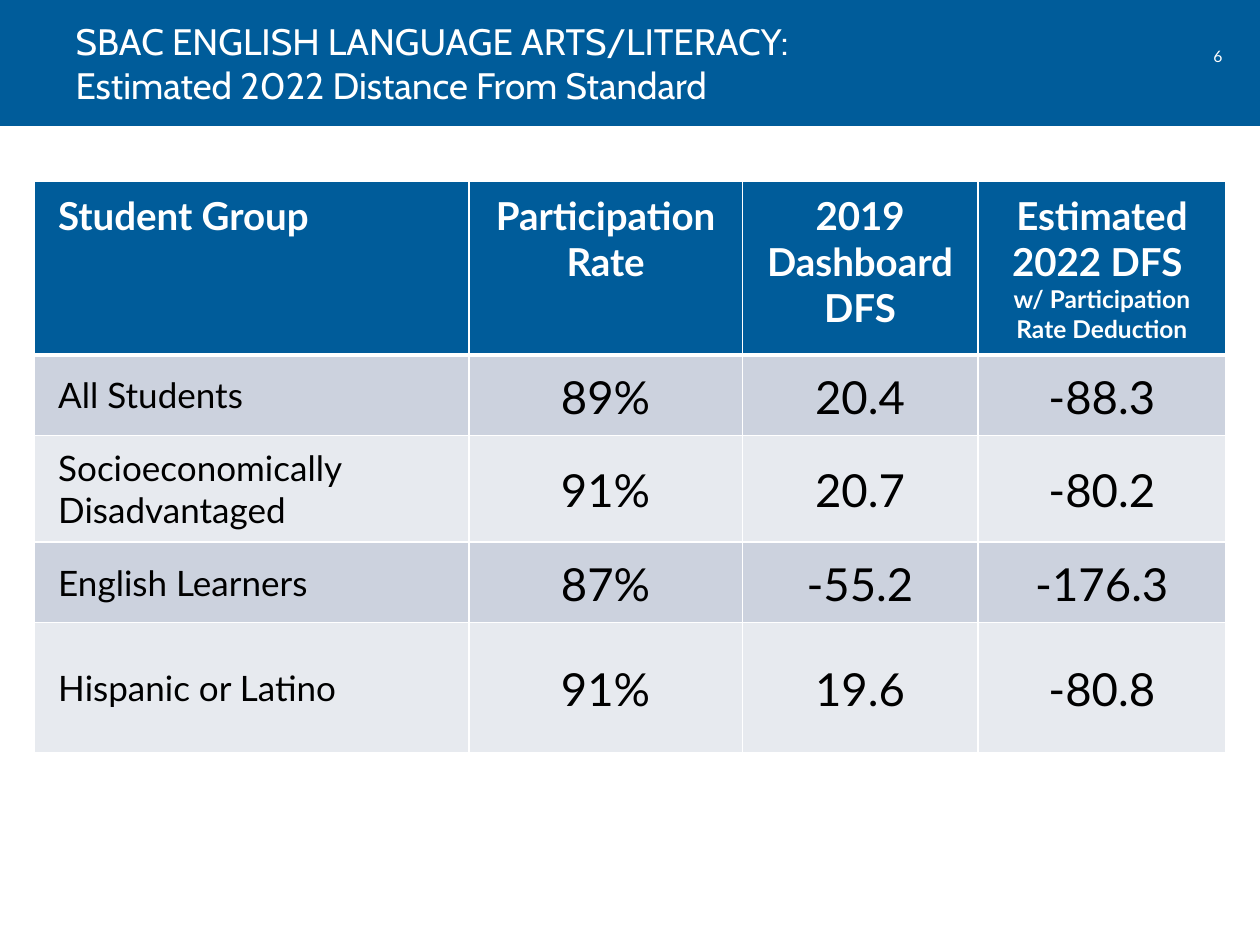
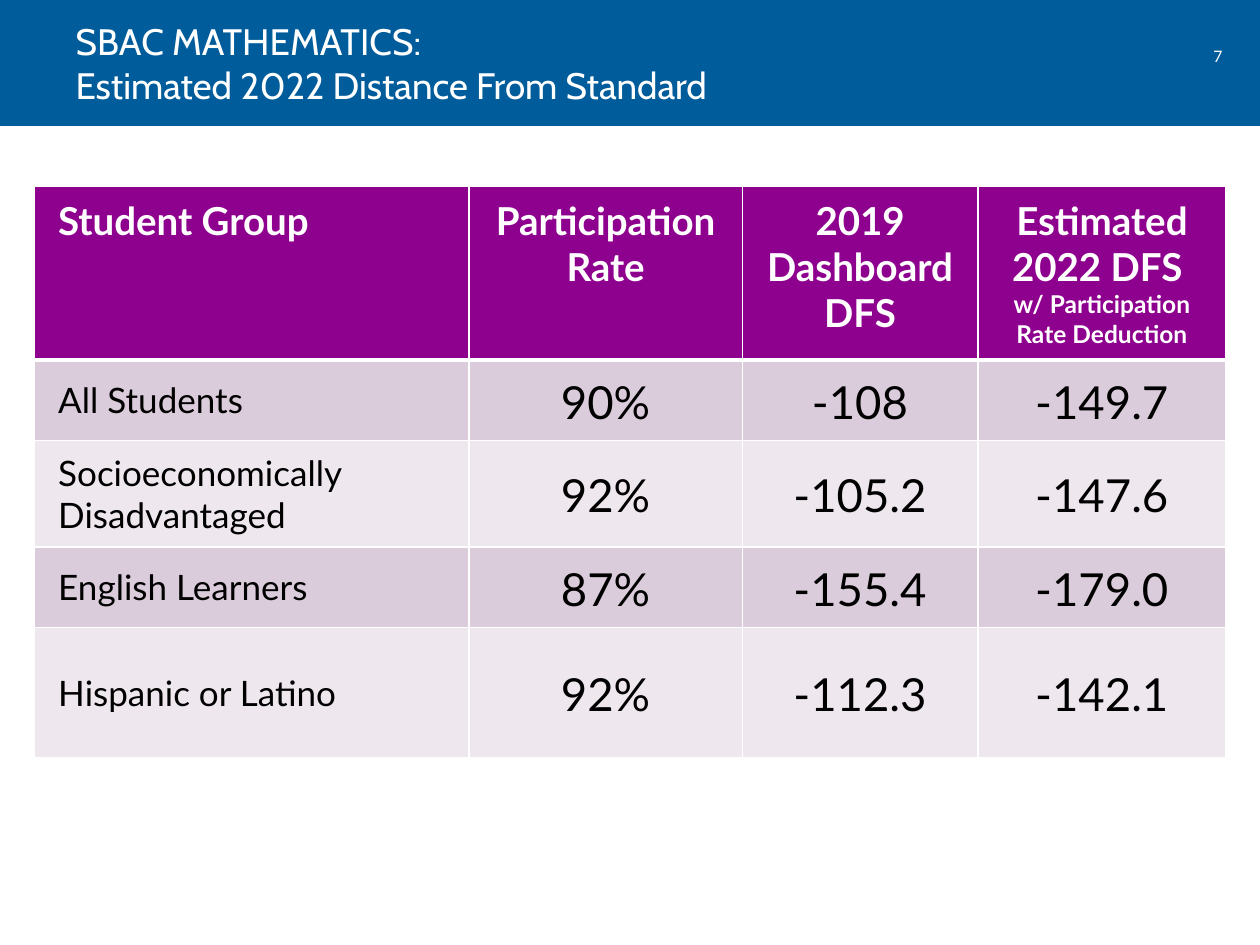
from dataclasses import dataclass

from lxml import etree
from pptx import Presentation
from pptx.dml.color import RGBColor
from pptx.enum import shapes, text
from pptx.oxml import ns
from pptx.util import Pt

WHITE = RGBColor(0xFF, 0xFF, 0xFF)
BLACK = RGBColor(0x00, 0x00, 0x00)
BLUE = RGBColor(0x00, 0x5C, 0x9A)
BLUE_DARK_BAND = RGBColor(0xCC, 0xD2, 0xDE)
BLUE_LIGHT_BAND = RGBColor(0xE7, 0xEA, 0xEF)
PURPLE = RGBColor(0x8E, 0x00, 0x8E)
PURPLE_DARK_BAND = RGBColor(0xDB, 0xCC, 0xDB)
PURPLE_LIGHT_BAND = RGBColor(0xEE, 0xE7, 0xEE)

TITLE_FONT = "Cabin"
BODY_FONT = "Lato"
SLIDE_W, SLIDE_H, BAND_H = 720, 540, 72
TABLE_LEFT, TABLE_H = 19.6, 328
COL_WIDTHS = (248.4, 156.2, 134.6, 141.8)
ROW_HEIGHTS = (60.5, 46, 46, 46, 74.5)
WIDE_INSETS = (13.7, 6.5, 13.7, 6.5)
TIGHT_INSETS = (1.5, 1.5, 1.5, 0)
SUBTITLE = "Estimated 2022 Distance From Standard"

# Each header is a list of (text, size) paragraphs.
HEADERS = (
    [("Student Group", 22)],
    [("Participation Rate", 22)],
    [("2019 Dashboard DFS", 22)],
    [("Estimated 2022 DFS ", 22), ("w/ Participation Rate Deduction", 14)],
)
GROUPS = ("All Students", "Socioeconomically Disadvantaged",
          "English Learners", "Hispanic or Latino")


@dataclass(frozen=True)
class Palette:
    header: RGBColor
    bands: tuple[RGBColor, RGBColor]


@dataclass(frozen=True)
class Report:
    number: int
    subject: str
    table_top: float
    palette: Palette
    results: tuple[tuple[str, str, str], ...]  # one row per student group


REPORTS = (
    Report(6, "SBAC ENGLISH LANGUAGE ARTS/LITERACY:", 103.4,
           Palette(BLUE, (BLUE_DARK_BAND, BLUE_LIGHT_BAND)),
           (("89%", "20.4", "-88.3"),
            ("91%", "20.7", "-80.2"),
            ("87%", "-55.2", "-176.3"),
            ("91%", "19.6", "-80.8"))),
    Report(7, "SBAC MATHEMATICS:", 106.2,
           Palette(PURPLE, (PURPLE_DARK_BAND, PURPLE_LIGHT_BAND)),
           (("90%", "-108", "-149.7"),
            ("92%", "-105.2", "-147.6"),
            ("87%", "-155.4", "-179.0"),
            ("92%", "-112.3", "-142.1"))),
)


def add_run(p, content: str, size: float, color: RGBColor,
            font: str = BODY_FONT, bold: bool = False) -> None:
    r = p.add_run()
    r.text = content
    r.font.name, r.font.size, r.font.bold = font, Pt(size), bold
    r.font.color.rgb = color


def add_band(slide) -> None:
    """Draw the title band behind everything else."""
    sp = slide.shapes.add_shape(shapes.MSO_SHAPE.RECTANGLE,
                                0, 0, Pt(SLIDE_W), Pt(BAND_H))
    sp.shadow.inherit = False
    sp.fill.solid()
    sp.fill.fore_color.rgb = BLUE
    sp.line.fill.background()
    slide.shapes._spTree.insert(2, sp._element)


def add_page_number(slide, number: int) -> None:
    tf = slide.shapes.add_textbox(Pt(679.7), Pt(23), Pt(32.4), Pt(18)).text_frame
    tf.word_wrap = True
    tf.auto_size = text.MSO_AUTO_SIZE.SHAPE_TO_FIT_TEXT
    p = tf.paragraphs[0]
    p.alignment = text.PP_ALIGN.CENTER
    add_run(p, str(number), 9, WHITE)


def set_title(slide, subject: str) -> None:
    title = slide.shapes.title
    title.left, title.top = Pt(36), Pt(0)
    title.width, title.height = Pt(641.5), Pt(BAND_H)
    tf = title.text_frame
    tf.auto_size = text.MSO_AUTO_SIZE.NONE
    tf.vertical_anchor = text.MSO_ANCHOR.MIDDLE
    p = tf.paragraphs[0]
    p.alignment = text.PP_ALIGN.LEFT
    add_run(p, subject, 21, WHITE, TITLE_FONT)
    p.add_line_break()
    add_run(p, SUBTITLE, 21, WHITE, TITLE_FONT)


def set_borders(cell, top: float = 1, bottom: float = 1) -> None:
    tc_pr = cell._tc.get_or_add_tcPr()
    sides = {"lnL": 1, "lnR": 1, "lnT": top, "lnB": bottom}
    for i, (side, width) in enumerate(sides.items()):
        ln = etree.Element(ns.qn(f"a:{side}"), w=str(Pt(width)))
        fill = etree.SubElement(ln, ns.qn("a:solidFill"))
        etree.SubElement(fill, ns.qn("a:srgbClr"), val=str(WHITE))
        tc_pr.insert(i, ln)


def fill_cell(cell, paragraphs, row: int, col: int, palette: Palette) -> None:
    is_header = row == 0
    cell.fill.solid()
    cell.fill.fore_color.rgb = (palette.header if is_header
                                else palette.bands[(row - 1) % 2])
    set_borders(cell, top=3 if row == 1 else 1, bottom=3 if is_header else 1)
    insets = WIDE_INSETS if is_header or col == 0 else TIGHT_INSETS
    (cell.margin_left, cell.margin_top,
     cell.margin_right, cell.margin_bottom) = map(Pt, insets)
    cell.vertical_anchor = (text.MSO_ANCHOR.TOP if is_header
                            else text.MSO_ANCHOR.MIDDLE)
    tf = cell.text_frame
    for i, (content, size) in enumerate(paragraphs):
        p = tf.add_paragraph() if i else tf.paragraphs[0]
        p.alignment = text.PP_ALIGN.CENTER if col else text.PP_ALIGN.LEFT
        add_run(p, content, size, WHITE if is_header else BLACK, bold=is_header)


def add_results_table(slide, report: Report) -> None:
    rows = [HEADERS]
    for group, values in zip(GROUPS, report.results):
        rows.append([[(group, 20)], *([(value, 26)] for value in values)])
    frame = slide.shapes.add_table(
        len(rows), len(HEADERS), Pt(TABLE_LEFT), Pt(report.table_top),
        Pt(sum(COL_WIDTHS)), Pt(TABLE_H))
    table = frame.table
    table.horz_banding = False
    for column, width in zip(table.columns, COL_WIDTHS):
        column.width = Pt(width)
    for table_row, height in zip(table.rows, ROW_HEIGHTS):
        table_row.height = Pt(height)
    frame.height = Pt(TABLE_H)
    for i, row in enumerate(rows):
        for j, paragraphs in enumerate(row):
            fill_cell(table.cell(i, j), paragraphs, i, j, report.palette)


def main() -> None:
    prs = Presentation()
    prs.slide_width, prs.slide_height = Pt(SLIDE_W), Pt(SLIDE_H)
    title_only = prs.slide_layouts[5]
    for report in REPORTS:
        slide = prs.slides.add_slide(title_only)
        add_band(slide)
        add_page_number(slide, report.number)
        set_title(slide, report.subject)
        add_results_table(slide, report)
    prs.save("out.pptx")


if __name__ == "__main__":
    main()
